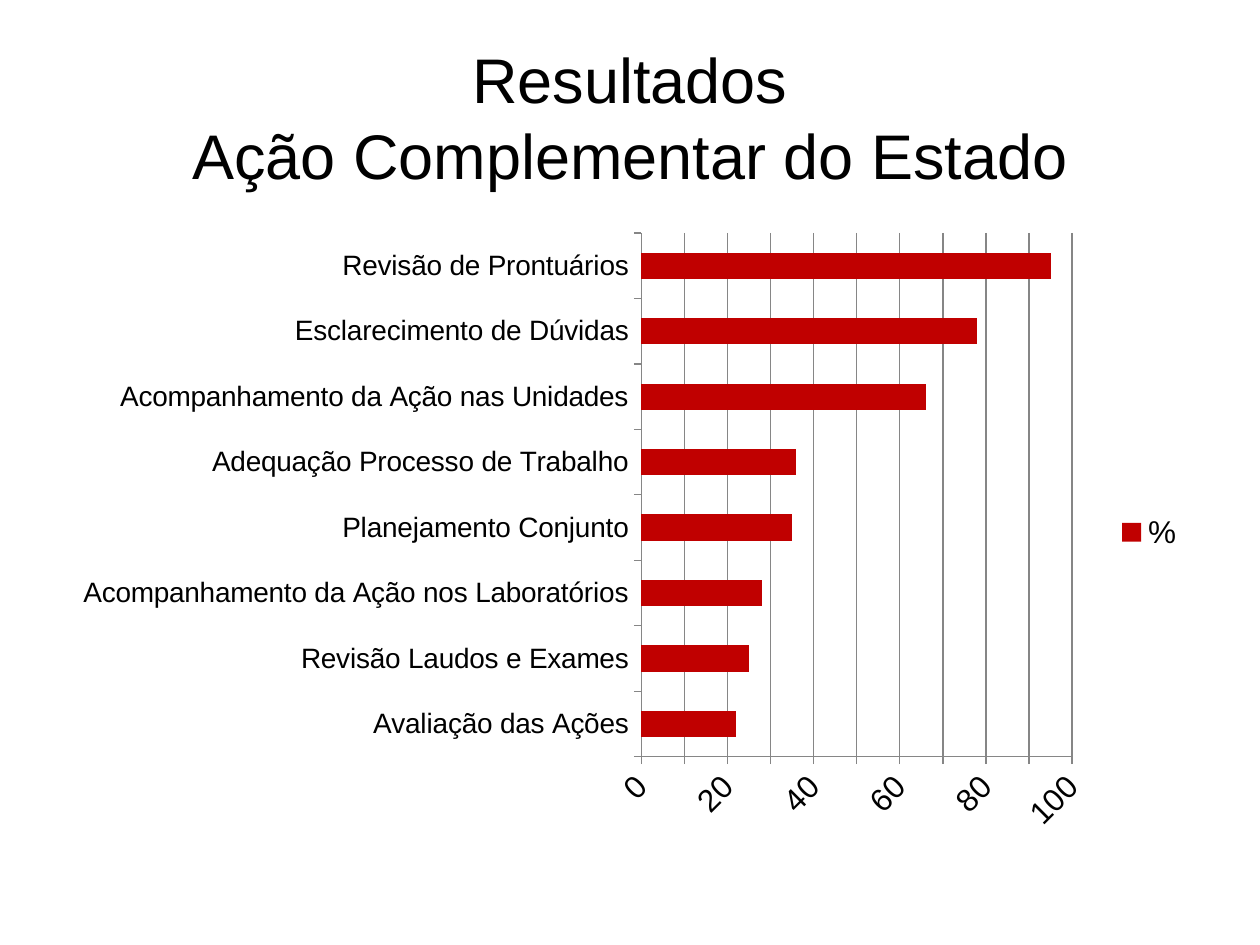
"""Build the results slide on the complementary action of the state."""
from lxml.etree import SubElement
from pptx import Presentation
from pptx.chart.data import CategoryChartData
from pptx.dml.color import RGBColor
from pptx.enum.chart import XL_CHART_TYPE as ChartType
from pptx.enum.chart import XL_LEGEND_POSITION as LegendPosition
from pptx.enum.chart import XL_TICK_MARK as TickMark
from pptx.enum.text import MSO_ANCHOR as Anchor
from pptx.enum.text import PP_ALIGN as Align
from pptx.oxml.ns import qn
from pptx.util import Inches, Pt

BLACK = RGBColor(0x00, 0x00, 0x00)
RED = RGBColor(0xC0, 0x00, 0x00)
GREY = RGBColor(0x86, 0x86, 0x86)

ACTIONS = {
    "Avaliação das Ações": 22,
    "Revisão Laudos e Exames": 25,
    "Acompanhamento da Ação nos Laboratórios": 28,
    "Planejamento Conjunto": 35,
    "Adequação Processo de Trabalho": 36,
    "Acompanhamento da Ação nas Unidades": 66,
    "Esclarecimento de Dúvidas": 78,
    "Revisão de Prontuários": 95,
}


class SlideBuilder:
    """Hold the style and the current slide."""

    font_name = "Arial"

    def __init__(self, slide):
        self.slide = slide

    def style_font(self, font, size):
        font.name = self.font_name
        font.size = Pt(size)
        font.bold = False
        font.color.rgb = BLACK

    def style_line(self, line):
        line.color.rgb = GREY
        line.width = Pt(0.75)

    def add_title(self, lines, left, top, width, height):
        title = self.slide.shapes.title
        title.left, title.top = Inches(left), Inches(top)
        title.width, title.height = Inches(width), Inches(height)
        title.text_frame.vertical_anchor = Anchor.MIDDLE
        paragraph = title.text_frame.paragraphs[0]
        paragraph.alignment = Align.CENTER
        for position, line in enumerate(lines):
            if position:
                paragraph.add_line_break()
            run = paragraph.add_run()
            run.text = line
            self.style_font(run.font, 36)

    def add_bar_chart(self, series_name, values, left, top, width, height):
        data = CategoryChartData()
        data.categories = list(values)
        data.add_series(series_name, list(values.values()))
        chart = self.slide.shapes.add_chart(
            ChartType.BAR_CLUSTERED, Inches(left), Inches(top),
            Inches(width), Inches(height), data).chart
        self.style_font(chart.font, 18)
        chart.has_title = False
        chart.has_legend = True
        chart.legend.position = LegendPosition.RIGHT
        chart.legend.include_in_layout = False

        plot = chart.plots[0]
        plot.vary_by_categories = False
        plot.gap_width = 150
        bars = plot.series[0].format.fill
        bars.solid()
        bars.fore_color.rgb = RED

        for axis, size in ((chart.category_axis, 16), (chart.value_axis, 18)):
            axis.major_tick_mark = TickMark.OUTSIDE
            axis.minor_tick_mark = TickMark.NONE
            self.style_font(axis.tick_labels.font, size)
            self.style_line(axis.format.line)

        percent_axis = chart.value_axis
        percent_axis.minimum_scale = 0
        percent_axis.maximum_scale = 100
        percent_axis.major_unit = 10
        percent_axis.has_major_gridlines = True
        self.style_line(percent_axis.major_gridlines.format.line)
        label_body = percent_axis._element.find(qn("c:txPr")).find(qn("a:bodyPr"))
        label_body.set("rot", "-2700000")
        label_body.set("vert", "horz")
        self.place_plot(chart, x=0.51, y=0.02, w=0.38, h=0.84)

    def place_plot(self, chart, **fractions):
        plot_area = chart._chartSpace.chart.plotArea
        layout = plot_area.find(qn("c:layout"))
        if layout is None:
            layout = SubElement(plot_area, qn("c:layout"))
            plot_area.insert(0, layout)
        manual = SubElement(layout, qn("c:manualLayout"))
        settings = {"layoutTarget": "inner", "xMode": "edge", "yMode": "edge", **fractions}
        for tag, value in settings.items():
            SubElement(manual, qn(f"c:{tag}")).set("val", str(value))


def main():
    presentation = Presentation()
    presentation.slide_width = Inches(10)
    presentation.slide_height = Inches(7.5)
    title_only = presentation.slide_layouts[5]
    builder = SlideBuilder(presentation.slides.add_slide(title_only))
    builder.add_title(["Resultados", "Ação Complementar do Estado"], 0.5, 0.3, 9, 1.25)
    builder.add_bar_chart("%", ACTIONS, 0.5, 1.75, 9, 4.95)
    presentation.save("out.pptx")


if __name__ == "__main__":
    main()
